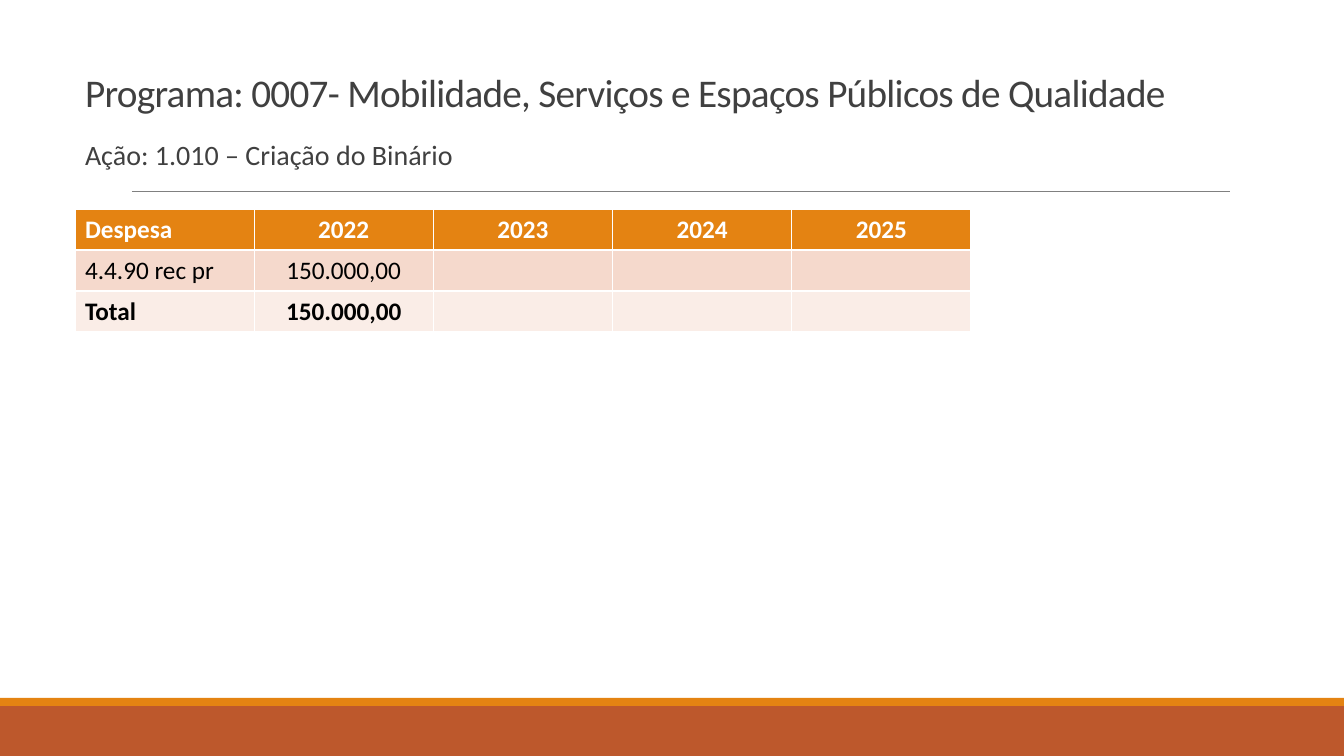
from lxml.etree import SubElement
from pptx import Presentation
from pptx.dml.color import RGBColor
from pptx.enum.shapes import MSO_CONNECTOR, MSO_SHAPE
from pptx.enum.text import MSO_ANCHOR, MSO_AUTO_SIZE, PP_ALIGN
from pptx.oxml.ns import qn
from pptx.util import Pt

PX = 914400 / 100.8
WIDTH, HEIGHT = 1344, 756
ORANGE, GREY = "E48312", "404040"


def px(*lengths):
    return [round(length * PX) for length in lengths]


def style(font, size, color, bold=False):
    font.name, font.size, font.bold = "Calibri", Pt(size), bold
    font.color.rgb = RGBColor.from_string(color)


prs = Presentation()
prs.slide_width, prs.slide_height = px(WIDTH, HEIGHT)
slide = prs.slides.add_slide(prs.slide_layouts[1])

# Footer bands
for top, height, color in [(706, 50, "BD582C"), (698, 8, ORANGE)]:
    band = slide.shapes.add_shape(MSO_SHAPE.RECTANGLE, *px(0, top, WIDTH, height))
    band.shadow.inherit = False
    band.fill.solid()
    band.fill.fore_color.rgb = RGBColor.from_string(color)
    band.line.fill.background()

# Rule under the heading
rule = slide.shapes.add_connector(MSO_CONNECTOR.STRAIGHT, *px(132, 191, 1230, 191))
rule.line.color.rgb = RGBColor.from_string("808080")
rule.line.width = Pt(0.5)
SubElement(rule._element.spPr, qn("a:effectLst"))

# Programme title
title = slide.shapes.title
title.left, title.top, title.width, title.height = px(75, 46, 1155, 75)
title.text_frame.text = "Programa: 0007- Mobilidade, Serviços e Espaços Públicos de Qualidade"
title.text_frame.vertical_anchor = MSO_ANCHOR.BOTTOM
title.text_frame.auto_size = MSO_AUTO_SIZE.NONE
programme = title.text_frame.paragraphs[0]
programme.alignment = PP_ALIGN.LEFT
programme.line_spacing = 0.85
style(programme.font, 28, GREY)
programme.runs[0].font._element.set("spc", "-50")

# Action line
body = slide.placeholders[1]
body.left, body.top, body.width, body.height = px(75, 136, 1080, 529)
body.text_frame.text = "Ação: 1.010 – Criação do Binário"
body.text_frame.margin_left = body.text_frame.margin_right = 0
body.text_frame.auto_size = MSO_AUTO_SIZE.NONE
action = body.text_frame.paragraphs[0]
action.line_spacing = 0.9
action.space_before, action.space_after = Pt(12), Pt(2)
style(action.font, 20, GREY)
indent = px(10)[0]
action_props = action._p.get_or_add_pPr()
action_props.set("marL", str(indent))
action_props.set("indent", str(-indent))
bullet = action_props.makeelement(qn("a:buChar"), {"char": " "})
action_props.find(qn("a:defRPr")).addprevious(bullet)

# Expense table: row texts, fill, text colour, bold
expenses = [
    (["Despesa", "2022", "2023", "2024", "2025"], ORANGE, "FFFFFF", True),
    (["4.4.90 rec pr", "150.000,00", "", "", ""], "F5D9CC", "000000", False),
    (["Total", "150.000,00", "", "", ""], "FAEDE7", "000000", True),
]
table = slide.shapes.add_table(3, 5, *px(75, 209, 896, 123)).table
table.horz_banding = False
for row, (texts, fill, color, bold) in enumerate(expenses):
    for column, text in enumerate(texts):
        cell = table.cell(row, column)
        cell.fill.solid()
        cell.fill.fore_color.rgb = RGBColor.from_string(fill)
        cell.text = text
        entry = cell.text_frame.paragraphs[0]
        entry.alignment = PP_ALIGN.CENTER if column else PP_ALIGN.LEFT
        style(entry.font, 18, color, bold)

prs.save("out.pptx")
